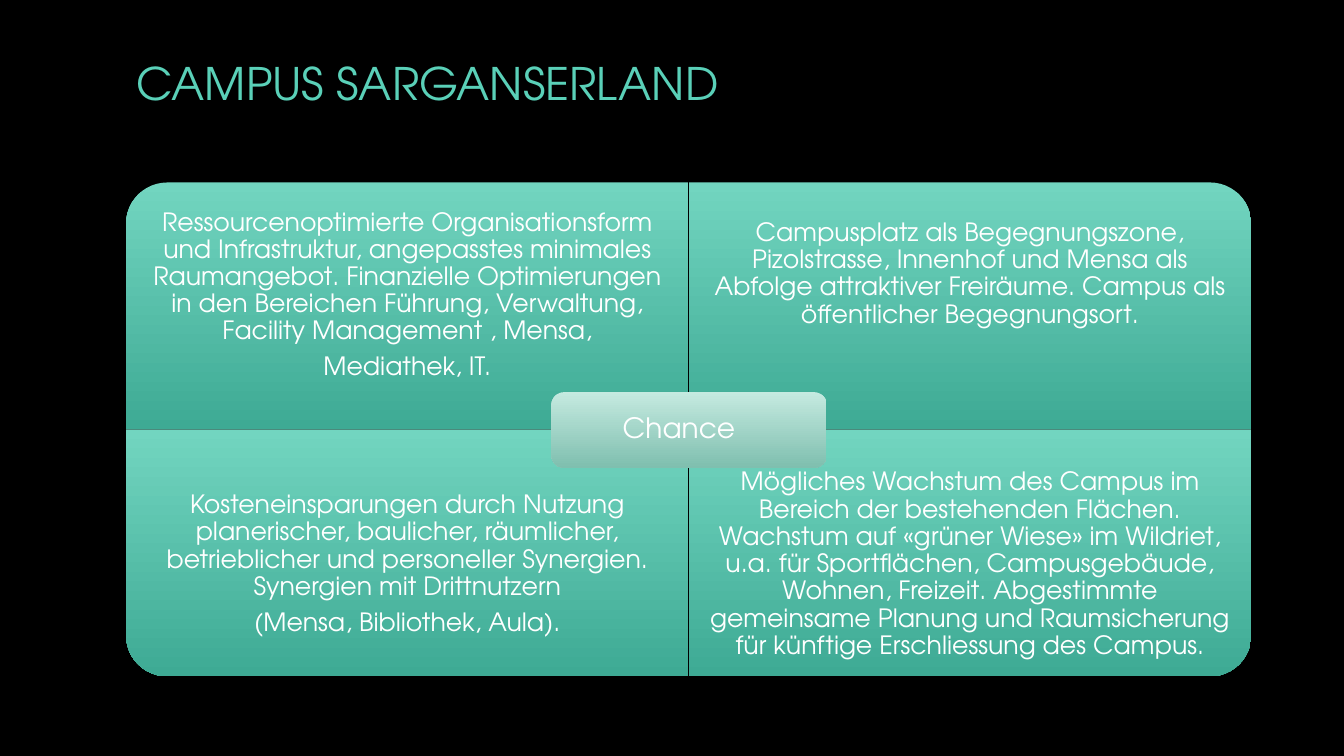
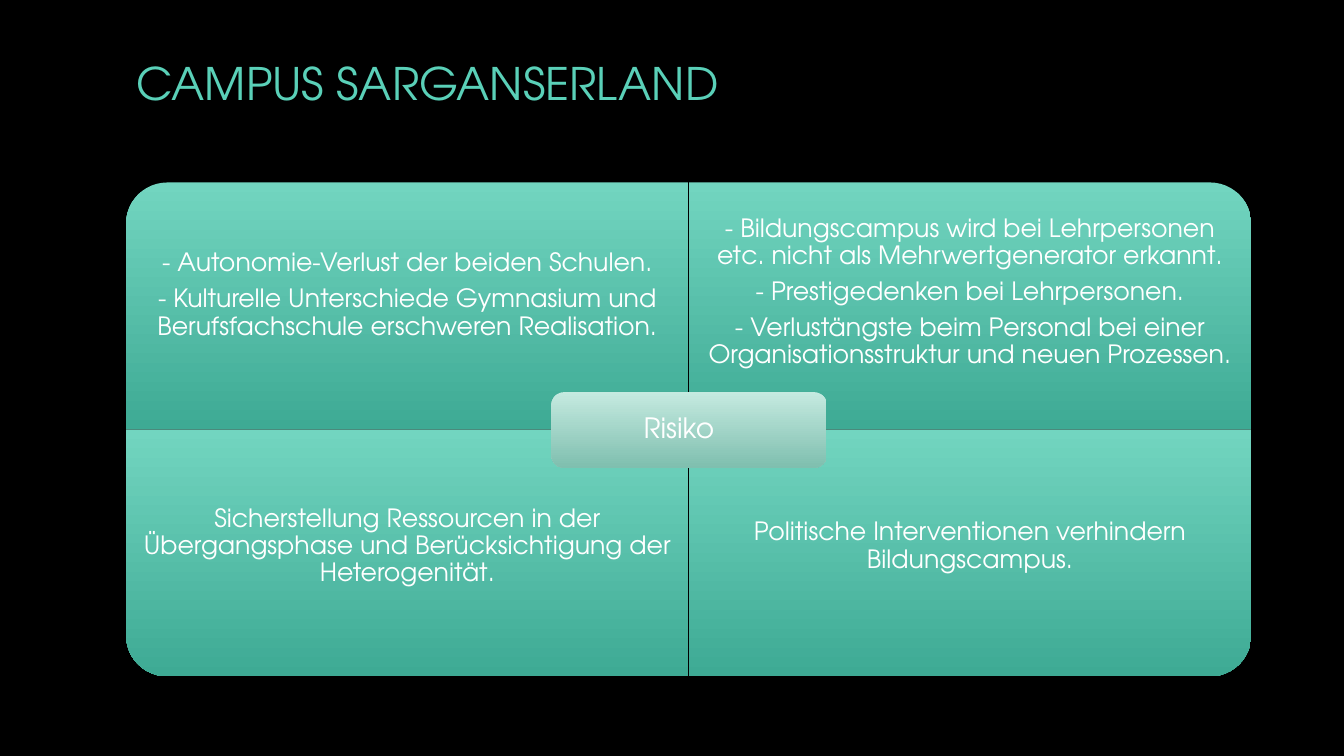
from dataclasses import dataclass
from typing import NamedTuple

from pptx import Presentation
from pptx.dml.color import RGBColor
from pptx.enum.shapes import MSO_SHAPE
from pptx.enum.text import MSO_ANCHOR, MSO_AUTO_SIZE, PP_ALIGN
from pptx.presentation import Presentation as Deck
from pptx.shapes.autoshape import Shape
from pptx.slide import Slide
from pptx.text.text import TextFrame
from pptx.util import Inches, Pt


# Theme: colours, font and type sizes
@dataclass(frozen=True)
class Theme:
    font: str = "TeX Gyre Adventor"
    back: str = "000000"
    title: str = "5AD0B8"
    text: str = "FFFFFF"
    panel: tuple[str, str] = ("72D5C0", "3EAA94")
    badge: tuple[str, str] = ("C5EAE0", "7FBFAF")
    head: int = 32
    label: int = 20
    body: int = 18
    gap: float = 6.3


class Box(NamedTuple):
    left: float
    top: float
    width: float
    height: float


class Panel(NamedTuple):
    mid: float  # vertical centre of the text, in inches
    lines: tuple[str, ...]


class Topic(NamedTuple):
    label: str
    panels: tuple[Panel, ...]  # row by row, left to right


THEME = Theme()
TITLE = "CAMPUS SARGANSERLAND"
HEAD = Box(1.25, 0.36, 10.83, 0.91)
CELL = Box(1.25, 1.81, 5.58, 2.45)
BADGE = Box(5.47, 3.89, 2.73, 0.75)
TEXT_H = 1.9
INSET = 0.14
TURNS = (270, 0, 180, 90)  # turns each rounded corner outwards

TOPICS = (
    Topic("Chance", (
        Panel(2.93, (
            "Ressourcenoptimierte Organisationsform und Infrastruktur, "
            "angepasstes minimales Raumangebot. Finanzielle Optimierungen in "
            "den Bereichen Führung, Verwaltung, Facility Management , Mensa,",
            "Mediathek, IT.",
        )),
        Panel(2.72, (
            "Campusplatz als Begegnungszone, Pizolstrasse, Innenhof und Mensa "
            "als Abfolge attraktiver Freiräume. Campus als öffentlicher "
            "Begegnungsort.",
        )),
        Panel(5.6, (
            "Kosteneinsparungen durch Nutzung planerischer, baulicher, "
            "räumlicher, betrieblicher und personeller Synergien. Synergien "
            "mit Drittnutzern",
            "(Mensa, Bibliothek, Aula).",
        )),
        Panel(5.6, (
            "Mögliches Wachstum des Campus im Bereich der bestehenden "
            "Flächen. Wachstum auf «grüner Wiese» im Wildriet, u.a. für "
            "Sportflächen, Campusgebäude, Wohnen, Freizeit. Abgestimmte "
            "gemeinsame Planung und Raumsicherung für künftige Erschliessung "
            "des Campus.",
        )),
    )),
    Topic("Risiko", (
        Panel(2.93, (
            "- Autonomie-Verlust der beiden Schulen.",
            "- Kulturelle Unterschiede Gymnasium und Berufsfachschule "
            "erschweren Realisation.",
        )),
        Panel(2.9, (
            "- Bildungscampus wird bei Lehrpersonen etc. nicht als "
            "Mehrwertgenerator erkannt.",
            "- Prestigedenken bei Lehrpersonen.",
            "- Verlustängste beim Personal bei einer Organisationsstruktur "
            "und neuen Prozessen.",
        )),
        Panel(5.42, (
            "Sicherstellung Ressourcen in der Übergangsphase und "
            "Berücksichtigung der Heterogenität.",
        )),
        Panel(5.42, (
            "Politische Interventionen verhindern Bildungscampus.",
        )),
    )),
)


def place(box: Box) -> tuple[Inches, ...]:
    return tuple(Inches(size) for size in box)


def write(frame: TextFrame, lines: tuple[str, ...], size: int, tint: str,
          align: PP_ALIGN = PP_ALIGN.CENTER, pitch: float = 0.9) -> None:
    frame.word_wrap = True
    frame.auto_size = MSO_AUTO_SIZE.NONE
    frame.vertical_anchor = MSO_ANCHOR.MIDDLE
    for row, line in enumerate(lines):
        para = frame.add_paragraph() if row else frame.paragraphs[0]
        para.alignment = align
        para.line_spacing = pitch
        para.space_before = Pt(THEME.gap if row else 0)
        run = para.add_run()
        run.text = line
        run.font.name = THEME.font
        run.font.size = Pt(size)
        run.font.color.rgb = RGBColor.from_string(tint)


def inset(frame: TextFrame, left: float, right: float, edge: float) -> None:
    frame.margin_left, frame.margin_right = Inches(left), Inches(right)
    frame.margin_top = frame.margin_bottom = Inches(edge)


def tile(slide: Slide, kind: MSO_SHAPE, box: Box,
         tints: tuple[str, str]) -> Shape:
    shape = slide.shapes.add_shape(kind, *place(box))
    shape.shadow.inherit = False
    shape.line.fill.background()
    shape.fill.gradient()
    shape.fill.gradient_angle = 270
    for stop, tint in zip(shape.fill.gradient_stops, tints):
        stop.color.rgb = RGBColor.from_string(tint)
    # The gradient stays upright when the shape is turned
    for grad in shape.element.spPr.xpath("a:gradFill"):
        grad.set("rotWithShape", "0")
    return shape


def quad(slide: Slide, spot: int, panel: Panel) -> None:
    row, col = divmod(spot, 2)
    left = CELL.left + col * CELL.width
    top = CELL.top + row * CELL.height
    # A quarter turn swaps width and height about the same centre
    turn = TURNS[spot]
    wide, high = CELL.width, CELL.height
    if turn % 180:
        wide, high = high, wide
    box = Box(left + (CELL.width - wide) / 2,
              top + (CELL.height - high) / 2, wide, high)
    tile(slide, MSO_SHAPE.ROUND_1_RECTANGLE, box, THEME.panel).rotation = turn
    area = Box(left, panel.mid - TEXT_H / 2, CELL.width, TEXT_H)
    frame = slide.shapes.add_textbox(*place(area)).text_frame
    inset(frame, INSET, INSET, 0)
    write(frame, panel.lines, THEME.body, THEME.text)


def build(deck: Deck, topic: Topic) -> None:
    slide = deck.slides.add_slide(deck.slide_layouts.get_by_name("Title Only"))
    # Title
    title = slide.shapes.title
    title.left, title.top, title.width, title.height = place(HEAD)
    write(title.text_frame, (TITLE,), THEME.head, THEME.title,
          PP_ALIGN.LEFT, 1.0)
    # Four panels
    for spot, panel in enumerate(topic.panels):
        quad(slide, spot, panel)
    # Centre badge, its label set slightly left
    badge = tile(slide, MSO_SHAPE.ROUNDED_RECTANGLE, BADGE, THEME.badge)
    inset(badge.text_frame, 0.1, 0.3, 0.08)
    write(badge.text_frame, (topic.label,), THEME.label, THEME.text)


def main() -> None:
    deck = Presentation()
    deck.slide_width, deck.slide_height = Inches(13.33), Inches(7.5)
    fill = deck.slide_master.background.fill
    fill.solid()
    fill.fore_color.rgb = RGBColor.from_string(THEME.back)
    for topic in TOPICS:
        build(deck, topic)
    deck.save("out.pptx")


if __name__ == "__main__":
    main()
